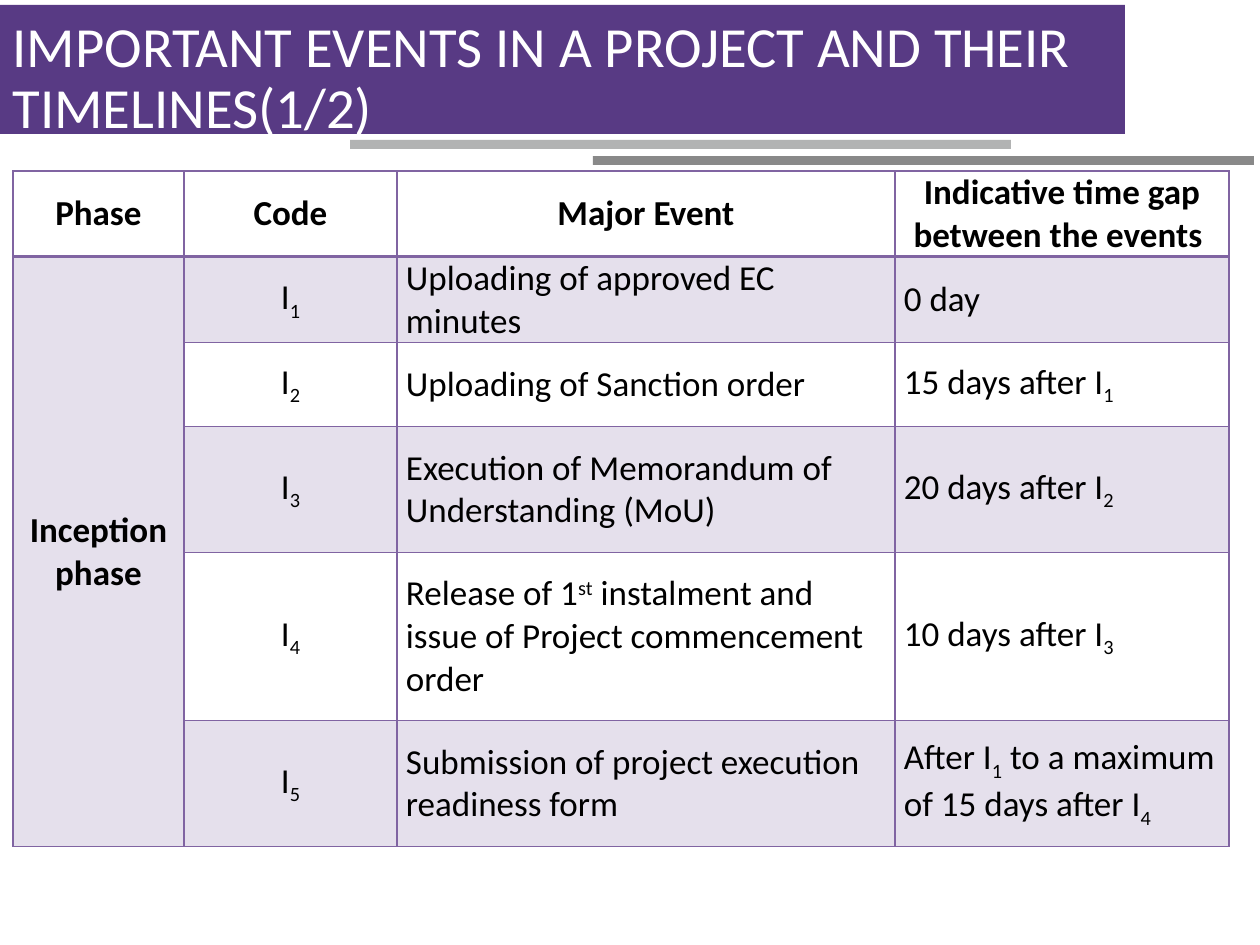
"""Build the slide listing the inception-phase events of a project."""
import lxml.etree
import pptx
import pptx.dml.color
import pptx.enum.shapes
import pptx.enum.text
import pptx.oxml.ns
import pptx.util

PX = 914400 / 126
FONT = "Calibri"
WHITE = pptx.dml.color.RGBColor(0xFF, 0xFF, 0xFF)
BLACK = pptx.dml.color.RGBColor(0, 0, 0)
DEEP_PURPLE = pptx.dml.color.RGBColor(0x58, 0x3A, 0x84)
PURPLE = pptx.dml.color.RGBColor(0x80, 0x64, 0xA2)
LIGHT_GRAY = pptx.dml.color.RGBColor(0xB2, 0xB3, 0xB3)
DARK_GRAY = pptx.dml.color.RGBColor(0x89, 0x89, 0x89)
MIDDLE = pptx.enum.text.MSO_ANCHOR.MIDDLE
LEFT = pptx.enum.text.PP_ALIGN.LEFT
CENTER = pptx.enum.text.PP_ALIGN.CENTER
BASELINES = {"_": "-25000", "^": "30000"}


def emu(*lengths):
    return [pptx.util.Emu(round(length * PX)) for length in lengths]


def add_element(parent, tag, **attributes):
    return lxml.etree.SubElement(parent, pptx.oxml.ns.qn(tag), attributes)


deck = pptx.Presentation()
deck.slide_width, deck.slide_height = emu(1260, 945)
page = deck.slides.add_slide(deck.slide_layouts[5])

for bounds, color in [
    ((0, 5, 1125, 129), DEEP_PURPLE),
    ((593, 156, 661, 9), DARK_GRAY),
    ((350, 140, 661, 9), LIGHT_GRAY),
]:
    bar = page.shapes.add_shape(pptx.enum.shapes.MSO_SHAPE.RECTANGLE, *emu(*bounds))
    bar.shadow.inherit = False
    bar.fill.solid()
    bar.fill.fore_color.rgb = color
    bar.line.fill.background()

title = page.shapes.title
bar.element.addnext(title.element)
title.left, title.top, title.width, title.height = emu(0, 15, 1135, 129)
title.text_frame.text = "IMPORTANT EVENTS IN A PROJECT AND THEIR TIMELINES(1/2)"
title.text_frame.word_wrap = True
title.text_frame.auto_size = pptx.enum.text.MSO_AUTO_SIZE.NONE
title.text_frame.vertical_anchor = MIDDLE
para = title.text_frame.paragraphs[0]
para.alignment = LEFT
para.line_spacing = 0.9
para.font.name = FONT
para.font.size = pptx.util.Pt(32.4)
para.font.color.rgb = WHITE

rows = [
    ("Phase", "Code", "Major Event", "Indicative time gap between the events "),
    ("Inception phase", "I|_1", "Uploading of approved EC minutes", "0 day"),
    ("", "I|_2", "Uploading of Sanction order", "15 days after I|_1"),
    ("", "I|_3", "Execution of Memorandum of Understanding (MoU)", "20 days after I|_2"),
    ("", "I|_4", "Release of 1|^st| instalment and issue of Project commencement order",
     "10 days after I|_3"),
    ("", "I|_5", "Submission of project execution readiness form",
     "After I|_1| to a maximum of 15 days after I|_4"),
]
column_widths = [171, 213, 498, 334]
row_heights = [84, 84, 84, 126, 168, 126]

frame = page.shapes.add_table(
    len(rows), len(column_widths), *emu(13, 171, sum(column_widths), sum(row_heights))
)
table = frame.table
table.first_row = table.horz_banding = False
for column, width in zip(table.columns, emu(*column_widths)):
    column.width = width
for row, height in zip(table.rows, emu(*row_heights)):
    row.height = height
table.cell(1, 0).merge(table.cell(len(rows) - 1, 0))

for row_index, row in enumerate(rows):
    for column_index, text in enumerate(row):
        cell = table.cell(row_index, column_index)
        cell.vertical_anchor = MIDDLE
        cell.margin_left, cell.margin_right = emu(9, 9)
        cell.margin_top = cell.margin_bottom = 0
        properties = cell._tc.get_or_add_tcPr()
        for side in "LRTB":
            thick = (row_index, side) in [(0, "B"), (1, "T")]
            border = add_element(properties, f"a:ln{side}", w="25400" if thick else "12700")
            add_element(add_element(border, "a:solidFill"), "a:srgbClr", val=str(PURPLE))
        if row_index % 2 or (column_index == 0 and row_index):
            cell.fill.solid()
            cell.fill.fore_color.rgb = PURPLE
            tint = properties.find(pptx.oxml.ns.qn("a:solidFill"))
            add_element(tint[0], "a:alpha", val="20000")
        else:
            cell.fill.background()
        if cell.is_spanned:
            continue
        para = cell.text_frame.paragraphs[0]
        para.alignment = CENTER if row_index == 0 or column_index < 2 else LEFT
        para.font.name = FONT
        para.font.size = pptx.util.Pt(20)
        para.font.bold = row_index == 0 or column_index == 0
        para.font.color.rgb = BLACK
        for part in text.split("|"):
            span = para.add_run()
            span.text = part.lstrip("_^")
            if part[0] in BASELINES:
                span.font._element.set("baseline", BASELINES[part[0]])

deck.save("out.pptx")
